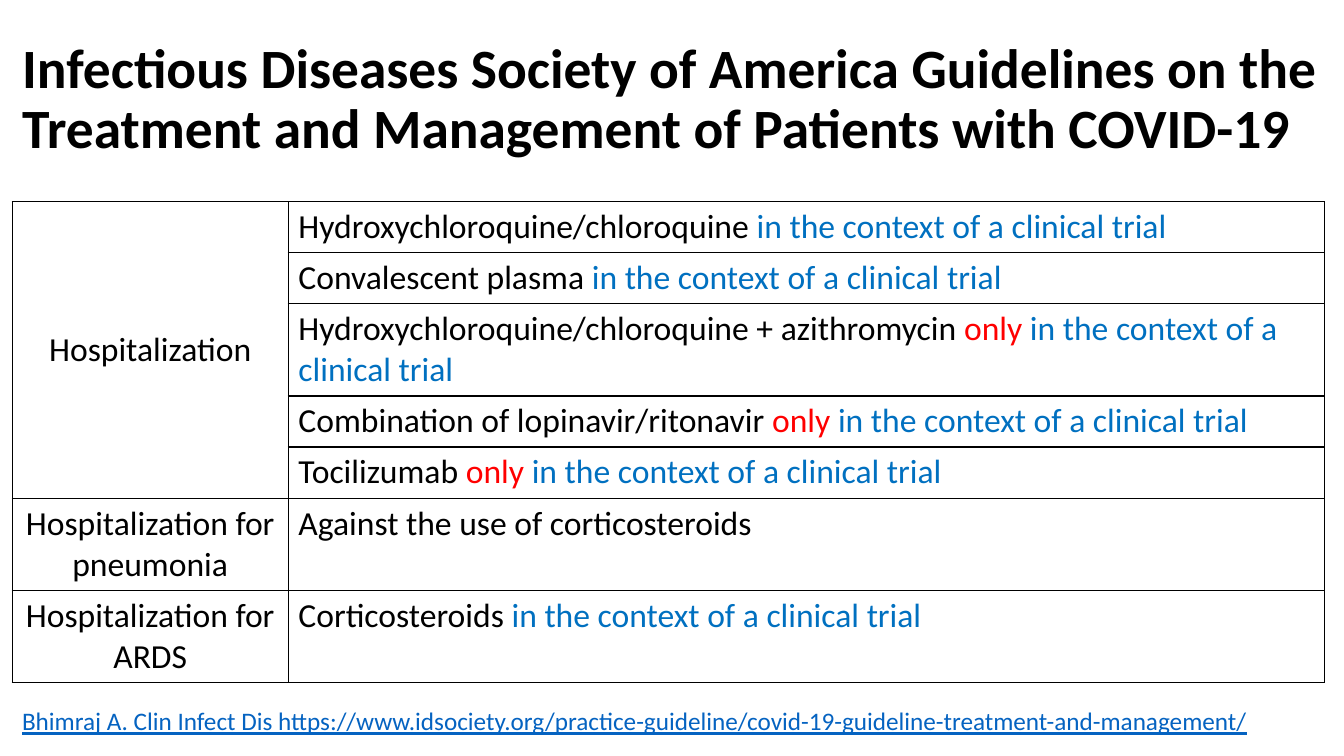
from lxml.etree import SubElement
from pptx import Presentation
from pptx.dml.color import RGBColor
from pptx.enum.text import MSO_ANCHOR as Anchor, MSO_AUTO_SIZE as AutoSize, PP_ALIGN as Align
from pptx.oxml.ns import qn
from pptx.util import Inches, Pt

COLORS = {"text": "000000", "trial": "0070C0", "only": "FF0000",
          "source": "0563C1", "border": "000000", "background": "FFFFFF"}
TRIAL = ("in the context of a clinical trial", "trial")
ONLY = ("only ", "only")


def add_run(paragraph, text, size, color="text"):
    run = paragraph.add_run()
    run.text = text
    run.font.name = "Calibri"
    run.font.size = Pt(size)
    run.font.color.rgb = RGBColor.from_string(COLORS[color])
    return run


def format_cell(cell):
    cell.fill.solid()
    cell.fill.fore_color.rgb = RGBColor.from_string(COLORS["background"])
    properties = cell._tc.get_or_add_tcPr()
    for index, side in enumerate(("a:lnL", "a:lnR", "a:lnT", "a:lnB")):
        line = SubElement(properties, qn(side), w=str(Pt(1)))
        fill = SubElement(line, qn("a:solidFill"))
        SubElement(fill, qn("a:srgbClr"), val=COLORS["border"])
        properties.insert(index, line)  # borders come before the fill


presentation = Presentation()
presentation.slide_width = Inches(13.33)
presentation.slide_height = Inches(7.5)
slide = presentation.slides.add_slide(presentation.slide_layouts[5])

# Title
title = slide.shapes.title
title.left, title.top = Inches(0.12), Inches(0.27)
title.width, title.height = Inches(13.12), Inches(1.45)
title.text_frame.auto_size = AutoSize.NONE
title.text_frame.word_wrap = True
title.text_frame.vertical_anchor = Anchor.MIDDLE
paragraph = title.text_frame.paragraphs[0]
paragraph.alignment = Align.LEFT
paragraph.line_spacing = 0.9
add_run(paragraph, "Infectious Diseases Society of America Guidelines on the "
        "Treatment and Management of Patients with COVID-19", 39.6).font.bold = True

# Recommendations: setting, row height, runs
recommendations = [
    ("Hospitalization", 0.5, [("Hydroxychloroquine/chloroquine ", "text"), TRIAL]),
    ("", 0.5, [("Convalescent plasma ", "text"), TRIAL]),
    ("", 0.9, [("Hydroxychloroquine/chloroquine + azithromycin ", "text"), ONLY, TRIAL]),
    ("", 0.5, [("Combination of lopinavir/ritonavir ", "text"), ONLY, TRIAL]),
    ("", 0.5, [("Tocilizumab ", "text"), ONLY, TRIAL]),
    ("Hospitalization for pneumonia", 0.9, [("Against the use of corticosteroids", "text")]),
    ("Hospitalization for ARDS", 0.9, [("Corticosteroids ", "text"), TRIAL]),
]
table = slide.shapes.add_table(len(recommendations), 2, Inches(0.12), Inches(2),
                               Inches(13.02), Inches(4.7)).table
table.first_row = False
table.horz_banding = False
table.columns[0].width = Inches(2.74)
table.columns[1].width = Inches(10.28)
table.cell(0, 0).merge(table.cell(4, 0))

for row, (setting, height, runs) in enumerate(recommendations):
    table.rows[row].height = Inches(height)
    setting_cell, advice_cell = table.cell(row, 0), table.cell(row, 1)
    format_cell(setting_cell)
    format_cell(advice_cell)
    if setting:
        setting_cell.vertical_anchor = Anchor.MIDDLE
        paragraph = setting_cell.text_frame.paragraphs[0]
        paragraph.alignment = Align.CENTER
        add_run(paragraph, setting, 24)
    for text, color in runs:
        add_run(advice_cell.text_frame.paragraphs[0], text, 24, color)

# Source
source = slide.shapes.add_textbox(Inches(0.12), Inches(6.95), Inches(12.79), Inches(0.4))
source.text_frame.word_wrap = True
source.text_frame.auto_size = AutoSize.SHAPE_TO_FIT_TEXT
add_run(source.text_frame.paragraphs[0],
        "Bhimraj A. Clin Infect Dis https://www.idsociety.org/practice-guideline/"
        "covid-19-guideline-treatment-and-management/", 18, "source").font.underline = True

presentation.save("out.pptx")
